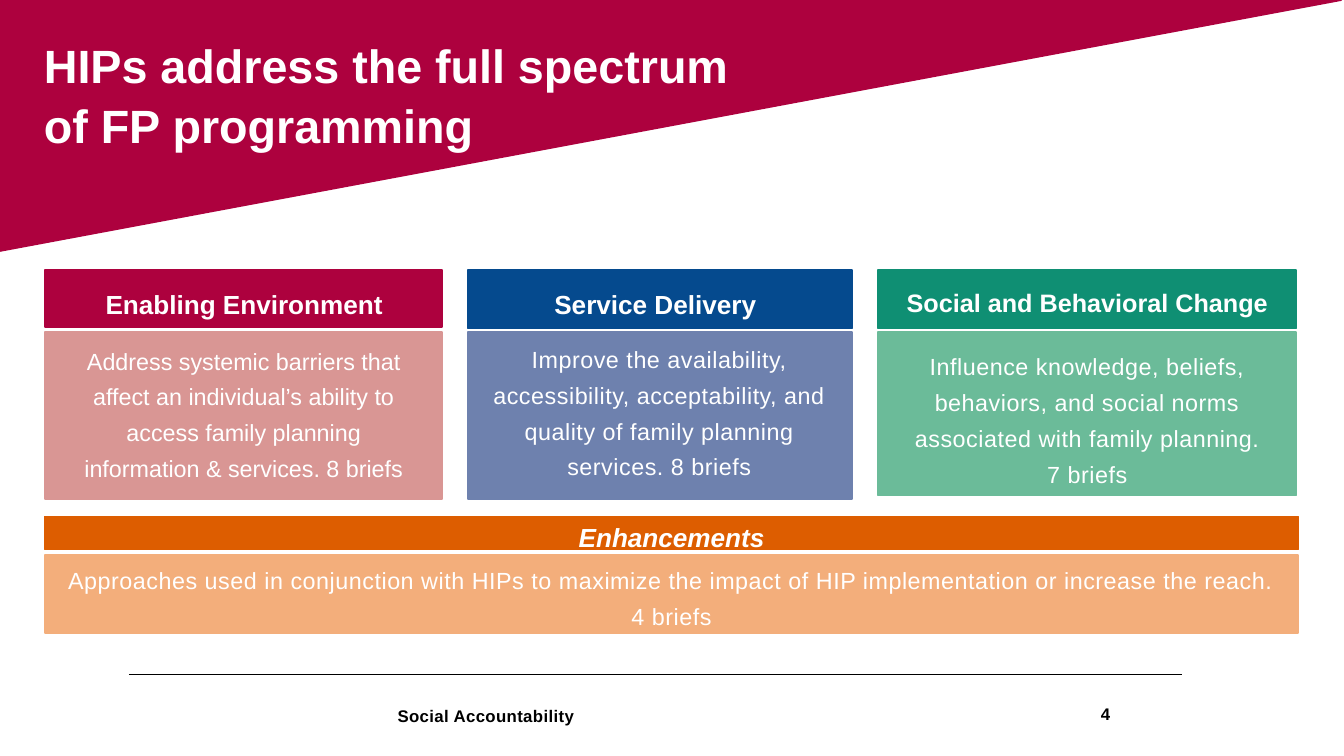
from collections import namedtuple
from dataclasses import dataclass

from lxml import etree
from pptx import Presentation
from pptx.dml.color import RGBColor
from pptx.enum.shapes import MSO_CONNECTOR, MSO_SHAPE
from pptx.enum.text import MSO_ANCHOR, PP_ALIGN
from pptx.oxml.ns import qn
from pptx.util import Pt

RECT, STRAIGHT = MSO_SHAPE.RECTANGLE, MSO_CONNECTOR.STRAIGHT
LEFT, CENTER, RIGHT = PP_ALIGN.LEFT, PP_ALIGN.CENTER, PP_ALIGN.RIGHT
TOP, MIDDLE = MSO_ANCHOR.TOP, MSO_ANCHOR.MIDDLE

Box = namedtuple("Box", "x y w h")
# label and detail are boxes measured from the top left of the pillar
Pillar = namedtuple(
    "Pillar", "box head_h body_h title text dark light label detail title_size tracking")


@dataclass(frozen=True)
class Theme:
    font: str = "Arial"
    white: str = "FFFFFF"
    black: str = "000000"
    crimson: str = "AD013E"
    rose: str = "D99694"
    navy: str = "054A8E"
    slate: str = "6E81AE"
    green: str = "0F8F73"
    mint: str = "6BBB99"
    orange: str = "DD5D00"
    peach: str = "F3AE7B"
    title: float = 50
    heading: float = 28
    heading_small: float = 27
    body: float = 25
    footer: float = 18
    title_leading: float = 65
    leading: float = 38.5
    footer_leading: float = 25.2
    tracking: float = 0.6
    footer_tracking: float = 0.4


THEME = Theme()

PILLARS = [
    Pillar(Box(48, 289, 426, 246), 61, 179, "Enabling Environment",
           "Address systemic barriers that affect an individual’s ability to "
           "access family planning information & services. 8 briefs",
           THEME.crimson, THEME.rose, Box(37, 15, 353, 35), Box(35, 74, 356, 150),
           THEME.heading, 0),
    Pillar(Box(501, 289, 412, 246), 63, 179, "Service Delivery",
           "Improve the availability, accessibility, acceptability, and "
           "quality of family planning services. 8 briefs",
           THEME.navy, THEME.slate, Box(40, 15, 322, 35), Box(27.5, 72, 356, 150),
           THEME.heading, THEME.tracking),
    Pillar(Box(941, 289, 448, 242), 63, 175, "Social and Behavioral Change",
           "Influence knowledge, beliefs, behaviors, and social norms "
           "associated with family planning.\n7 briefs",
           THEME.green, THEME.mint, Box(30, 13, 388, 35), Box(0, 80, 448, 150),
           THEME.heading_small, THEME.tracking),
]


def inside(outer, inner):
    """Turn a box measured from outer's corner into a slide box."""
    return Box(outer.x + inner.x, outer.y + inner.y, inner.w, inner.h)


def paint(shape, color, line_width=2):
    shape.shadow.inherit = False
    shape.fill.solid()
    shape.fill.fore_color.rgb = RGBColor.from_string(color)
    shape.line.color.rgb = RGBColor.from_string(color)
    shape.line.width = Pt(line_width)


def add_panel(slide, box, color, line_width=2):
    panel = slide.shapes.add_shape(RECT, *map(Pt, box))
    paint(panel, color, line_width)
    return panel


def write(shape, text, size, color=THEME.white, align=CENTER, leading=None,
          bold=False, italic=False, tracking=0, anchor=TOP, inset=0):
    frame = shape.text_frame
    frame.word_wrap = True
    frame.vertical_anchor = anchor
    frame.margin_left = frame.margin_right = Pt(inset)
    frame.margin_top = frame.margin_bottom = Pt(inset / 2)
    frame.text = text
    for paragraph in frame.paragraphs:
        paragraph.alignment = align
        if leading:
            paragraph.line_spacing = Pt(leading)
        for run in paragraph.runs:
            font = run.font
            font.name, font.size = THEME.font, Pt(size)
            font.bold, font.italic = bold, italic
            font.color.rgb = RGBColor.from_string(color)
            if tracking:
                font._element.set("spc", str(round(tracking * 100)))


def add_text(slide, box, text, size, **style):
    write(slide.shapes.add_textbox(*map(Pt, box)), text, size, **style)


def add_banner(slide, box):
    corners = [(box.x, box.y + box.h), (box.x + box.w, box.y)]
    outline = slide.shapes.build_freeform(Pt(box.x), Pt(box.y))
    outline.add_line_segments([(Pt(x), Pt(y)) for x, y in corners], close=True)
    paint(outline.convert_to_shape(), THEME.crimson)
    add_text(slide, inside(box, Box(48, 34, 762, 131)),
             "HIPs address the full spectrum of FP programming", THEME.title,
             align=LEFT, leading=THEME.title_leading, bold=True)


def add_pillar(slide, pillar):
    box = pillar.box
    add_panel(slide, Box(box.x, box.y + box.h - pillar.body_h, box.w, pillar.body_h),
              pillar.light)
    add_panel(slide, Box(box.x, box.y, box.w, pillar.head_h), pillar.dark)
    add_text(slide, inside(box, pillar.label), pillar.title, pillar.title_size,
             leading=THEME.leading, bold=True)
    add_text(slide, inside(box, pillar.detail), pillar.text, THEME.body,
             leading=THEME.leading, tracking=pillar.tracking)


def add_enhancements(slide, box):
    head_h, body_h = 35, 83.5
    add_panel(slide, Box(box.x, box.y + box.h - body_h, box.w, body_h), THEME.peach)
    heading = add_panel(slide, Box(box.x, box.y, box.w, head_h), THEME.orange, 0.75)
    write(heading, "Enhancements", THEME.heading, leading=THEME.leading,
          bold=True, italic=True)
    detail = add_panel(slide, inside(box, Box(16.5, 52, 1310, 62)), THEME.peach)
    write(detail,
          "Approaches used in conjunction with HIPs to maximize the impact of HIP "
          "implementation or increase the reach. 4 briefs",
          THEME.body, leading=THEME.leading, tracking=THEME.tracking,
          anchor=MIDDLE, inset=7.2)


def add_footer(slide, box):
    rule = slide.shapes.add_connector(
        STRAIGHT, Pt(box.x), Pt(box.y), Pt(box.x + box.w), Pt(box.y))
    rule.line.color.rgb = RGBColor.from_string(THEME.black)
    rule.line.width = Pt(0.75)
    etree.SubElement(rule._element.spPr, qn("a:effectLst"))
    add_text(slide, inside(box, Box(288, 29.5, 640, 24)), "Social Accountability",
             THEME.footer, color=THEME.black, align=LEFT, bold=True,
             leading=THEME.footer_leading, tracking=THEME.footer_tracking)
    add_text(slide, inside(box, Box(998, 29.5, 60.5, 24)), "4", THEME.footer,
             color=THEME.black, align=RIGHT, bold=True, anchor=MIDDLE, inset=7.2)


def main():
    deck = Presentation()
    deck.slide_width, deck.slide_height = Pt(1440), Pt(810)
    slide = deck.slides.add_slide(deck.slide_layouts[6])
    add_footer(slide, Box(138, 723, 1128, 54))
    add_banner(slide, Box(-1, 0, 1438, 269))
    for pillar in PILLARS:
        add_pillar(slide, pillar)
    add_enhancements(slide, Box(48, 553.5, 1343, 125))
    deck.save("out.pptx")


if __name__ == "__main__":
    main()
